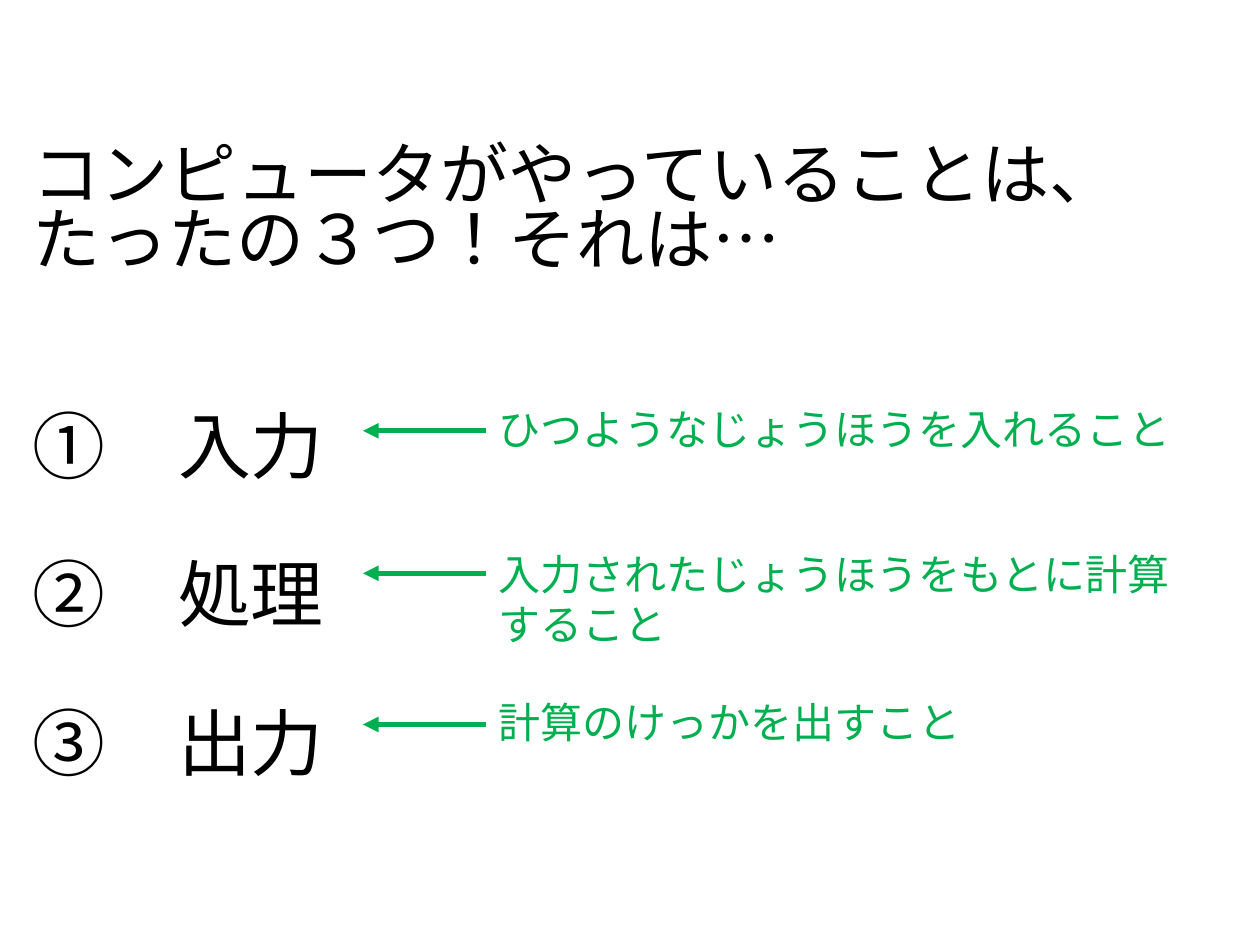
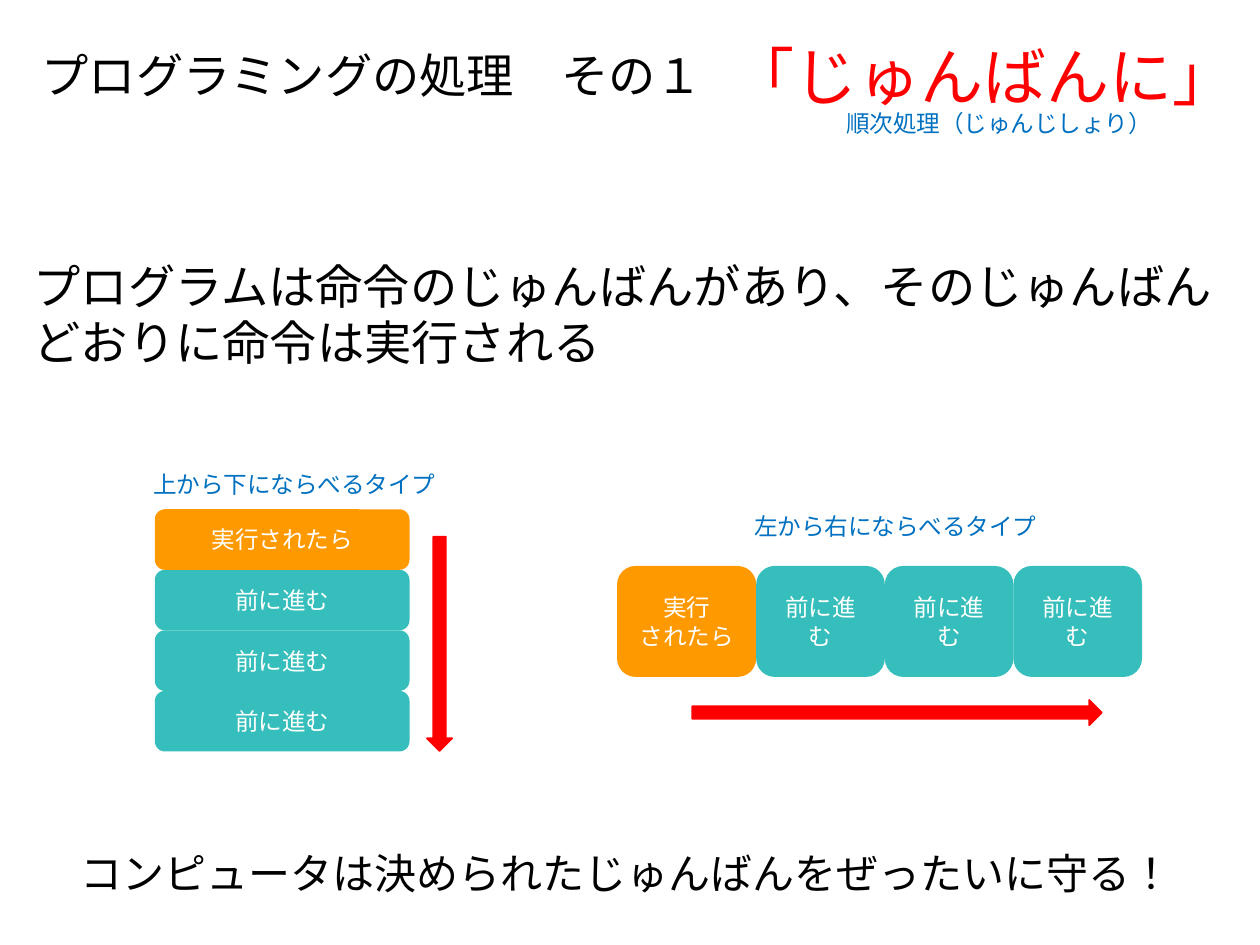
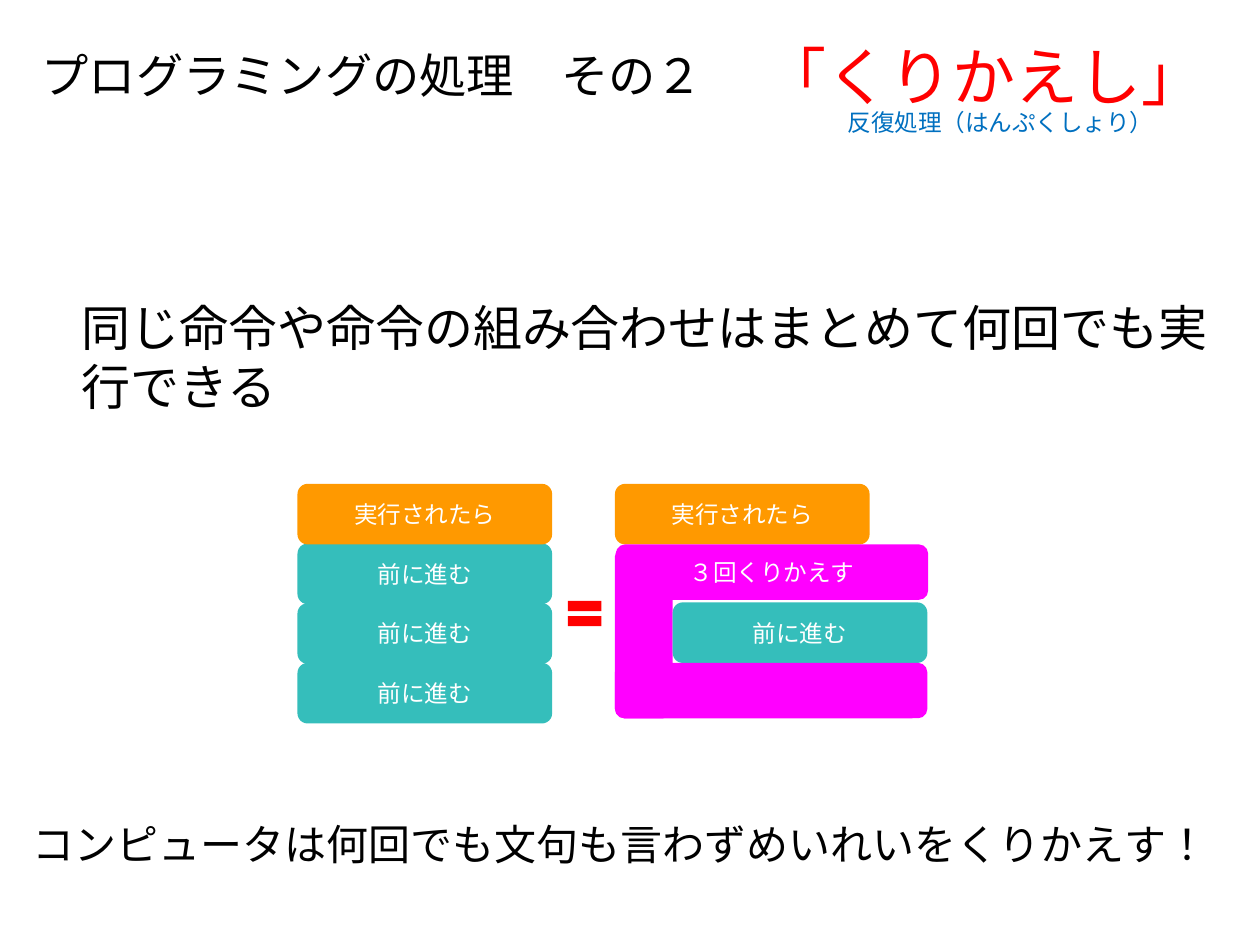
from lxml.etree import SubElement as Sub
from pptx import Presentation
from pptx.dml.color import RGBColor
from pptx.enum.lang import MSO_LANGUAGE_ID as Lang
from pptx.enum.shapes import MSO_CONNECTOR as Link, MSO_SHAPE as Form
from pptx.enum.text import MSO_ANCHOR as Anchor, PP_ALIGN as Align
from pptx.oxml.ns import qn
from pptx.util import Pt

BLACK = RGBColor(0x00, 0x00, 0x00)
WHITE = RGBColor(0xFF, 0xFF, 0xFF)
RED = RGBColor(0xFF, 0x00, 0x00)
BLUE = RGBColor(0x00, 0x70, 0xC0)
GREEN = RGBColor(0x00, 0xB0, 0x50)
TEAL = RGBColor(0x35, 0xBE, 0xBB)
ORANGE = RGBColor(0xFF, 0x99, 0x00)
PINK = RGBColor(0xFF, 0x00, 0xFF)

WIDE, HIGH = 145.5, 34.6
START, STEP = "実行されたら", "前に進む"


def pts(box):
    return [Pt(n) for n in box]


def write(par, text, size=24, color=BLACK, face="Calibri", align=Align.LEFT,
          lead=None, before=None):
    par.alignment = align
    if lead:
        par.line_spacing = lead
    if before is not None:
        par.space_before = Pt(before)
    run = par.add_run()
    run.text = text
    font = run.font
    font.size, font.name = Pt(size), face
    font.color.rgb = color
    font.language_id = Lang.JAPANESE


def label(slide, box, text, wrap=True, anchor=Anchor.TOP, **style):
    frame = slide.shapes.add_textbox(*pts(box)).text_frame
    frame.word_wrap = wrap
    frame.vertical_anchor = anchor
    write(frame.paragraphs[0], text, **style)
    return frame


def shape(slide, form, box, color, edge=False):
    item = slide.shapes.add_shape(form, *pts(box))
    item.shadow.inherit = False
    item.fill.solid()
    item.fill.fore_color.rgb = color
    if edge:
        item.line.color.rgb = color
        item.line.width = Pt(1)
    else:
        item.line.fill.background()
    return item


def block(slide, box, color, *lines):
    frame = shape(slide, Form.ROUNDED_RECTANGLE, box, color).text_frame
    frame.word_wrap = True
    frame.vertical_anchor = Anchor.MIDDLE
    for i, text in enumerate(lines):
        par = frame.add_paragraph() if i else frame.paragraphs[0]
        write(par, text, size=13.5, color=WHITE, align=Align.CENTER)


def arrow(slide, x, y, length):
    line = slide.shapes.add_connector(Link.STRAIGHT, *pts((x, y, x - length, y)))
    line.line.color.rgb = GREEN
    line.line.width = Pt(3)
    prop = line.line._get_or_add_ln()
    Sub(prop, qn("a:tailEnd"), type="triangle")
    Sub(prop.getparent(), qn("a:effectLst"))


def head(slide, count, name, term, x, y):
    for left, width, text, size, color in (
            (-19.4, 464.4, f"プログラミングの処理　その{count}", 27, BLACK),
            (355, 414, f"「{name}」", 36, RED)):
        label(slide, (left, 15.1, width, 55.4), text, anchor=Anchor.MIDDLE,
              size=size, color=color, face="Arial", align=Align.CENTER)
    note(slide, x, y, 191.5, term)


def note(slide, x, y, width, text):
    label(slide, (x, y, width, 23.8), text, wrap=False, size=13.5, color=BLUE)


def stack(slide, x, y, pitch=HIGH):
    for i in range(1, 4):
        block(slide, (x, y + i * pitch, WIDE, HIGH), TEAL, STEP)
    block(slide, (x, y, WIDE, HIGH), ORANGE, START)


def row(slide, x, y):
    first, width, height = 79.5, 73.5, 63.4
    block(slide, (x, y, first, height), ORANGE, "実行", "されたら")
    for i in range(3):
        block(slide, (x + first + i * width, y, width, height), TEAL, STEP)


def loop(slide, x, y):
    arm, bar, side = 178.5, 31.7, 33
    block(slide, (x, y, WIDE, HIGH), ORANGE, START)
    block(slide, (x + 0.5, y + HIGH, arm, bar), PINK, "３回くりかえす")
    block(slide, (x, y + 36, side, 98), PINK)
    block(slide, (x + side, y + 67.7, WIDE, HIGH), TEAL, STEP)
    block(slide, (x, y + 102.3, arm, bar), PINK)


def three(slide):
    frame = label(slide, (11.5, 80.6, 708.5, 379.4),
                  "コンピュータがやっていることは、たったの３つ！それは…",
                  size=38.9, lead=0.8, before=10)
    for text, gap in (("①　入力", 45), ("②　処理", 10), ("③　出力", 10)):
        write(frame.add_paragraph(), text, size=41.6, lead=1.5, before=gap)
    left = 277.9
    for text, top, mid, width, height in (
            ("ひつようなじょうほうを入れること", 226.8, 246.2, 415.4, 36),
            ("入力されたじょうほうをもとに計算すること", 309.6, 327.6, 409, 65.5),
            ("計算のけっかを出すこと", 394.6, 414, 306, 36)):
        arrow(slide, left, mid, 70.5)
        label(slide, (left, top, width, height), text, color=GREEN)


def order(slide):
    head(slide, "１", "じゅんばんに", "順次処理（じゅんじしょり）", 476.6, 59)
    label(slide, (12.2, 143.3, 695.5, 72.7),
          "プログラムは命令のじゅんばんがあり、そのじゅんばんどおりに命令は実行される",
          size=27)
    note(slide, 80.6, 265, 177.8, "上から下にならべるタイプ")
    stack(slide, 88.5, 291)
    shape(slide, Form.DOWN_ARROW, (244, 306.7, 14.4, 122.4), RED, edge=True)
    note(slide, 424, 288.7, 177.8, "左から右にならべるタイプ")
    row(slide, 352.6, 323.4)
    shape(slide, Form.RIGHT_ARROW, (395.6, 400, 234, 14.4), RED, edge=True)
    label(slide, (38.9, 481, 640.5, 36),
          "コンピュータは決められたじゅんばんをぜったいに守る！")


def again(slide):
    head(slide, "２", "くりかえし", "反復処理（はんぷくしょり）", 477.4, 58.3)
    label(slide, (39.6, 166.3, 659, 74.9),
          "同じ命令や命令の組み合わせはまとめて何回でも実行できる",
          size=28, face="Arial")
    stack(slide, 170, 276.5, pitch=34.1)
    shape(slide, Form.MATH_EQUAL, (321.1, 338.4, 26, 24.5), RED)
    loop(slide, 351.4, 276.5)
    label(slide, (11.5, 464.4, 712, 36),
          "コンピュータは何回でも文句も言わずめいれいをくりかえす！")


def main():
    deck = Presentation()
    deck.slide_width, deck.slide_height = Pt(720), Pt(540)
    for build in (three, order, again):
        build(deck.slides.add_slide(deck.slide_layouts[6]))
    deck.save("out.pptx")


if __name__ == "__main__":
    main()
